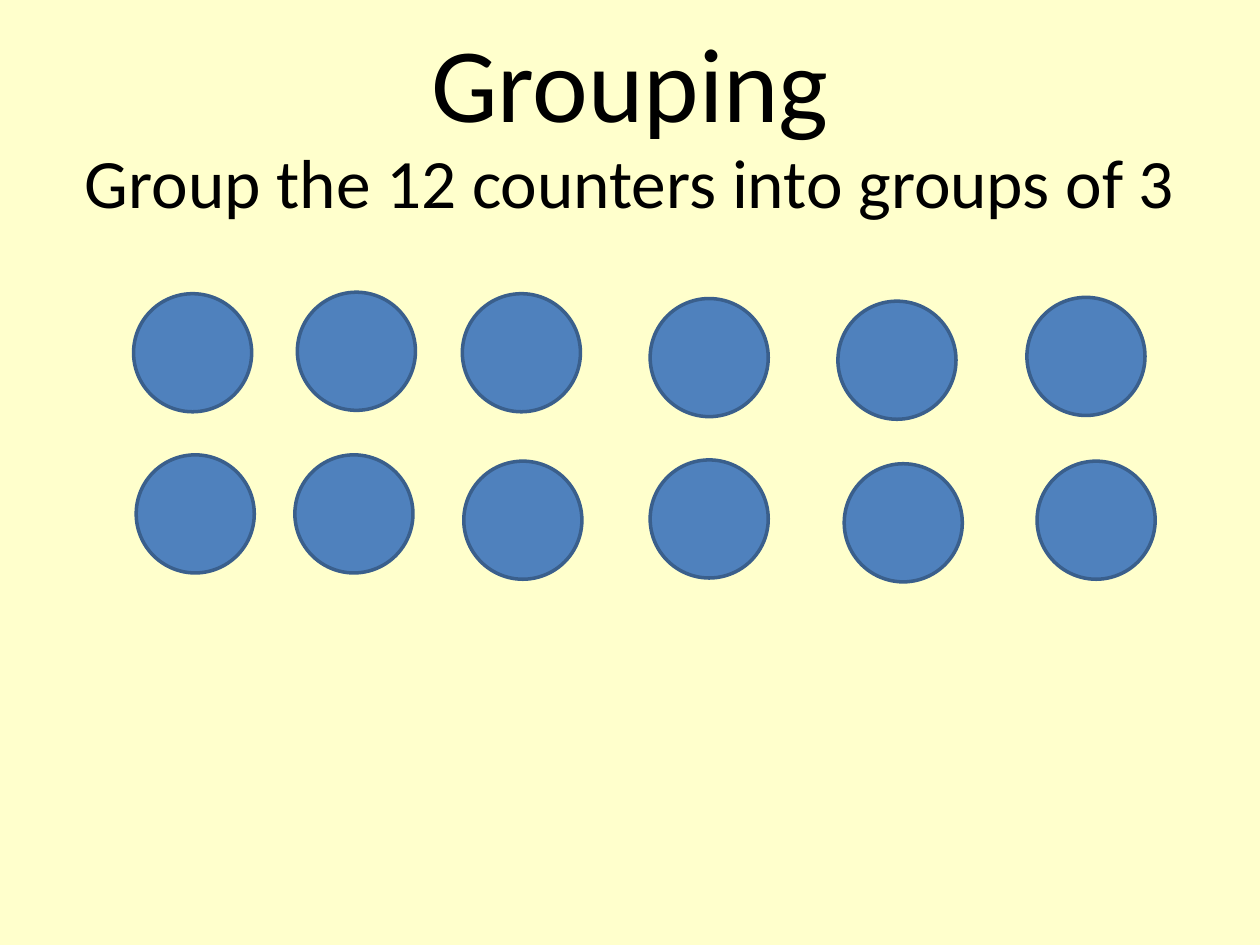
from dataclasses import dataclass

from pptx import Presentation
from pptx.dml.color import RGBColor
from pptx.enum.shapes import MSO_SHAPE
from pptx.enum.text import MSO_ANCHOR, MSO_AUTO_SIZE, PP_ALIGN
from pptx.util import Pt

OVAL = MSO_SHAPE.OVAL
MIDDLE = MSO_ANCHOR.MIDDLE
NO_AUTOFIT = MSO_AUTO_SIZE.NONE
CENTER = PP_ALIGN.CENTER
TITLE_ONLY = 5


@dataclass(frozen=True)
class Theme:
    font: str = "Calibri"
    background: RGBColor = RGBColor(0xFF, 0xFF, 0xCC)
    text: RGBColor = RGBColor(0, 0, 0)
    counter: RGBColor = RGBColor(0x4F, 0x81, 0xBD)
    outline: RGBColor = RGBColor(0x3A, 0x5F, 0x8C)
    heading_size: float = 60.3
    task_size: float = 39.6
    outline_width: float = 2


THEME = Theme()
COUNTER_SIZE = 67.5

# The counters are laid out loosely by hand: (left, top) of each, row by row.
COUNTER_ROWS = [
    [(76.3, 167.8), (169.9, 167), (264.2, 167.8),
     (371.5, 170.6), (478.8, 172.1), (586.8, 169.9)],
    [(77.8, 259.9), (168.5, 259.9), (265, 263.5),
     (371.5, 262.8), (482.4, 265), (592.6, 263.5)],
]


def set_title(page, heading, task):
    title = page.shapes.title
    title.left, title.top = Pt(36), Pt(21.6)
    title.width, title.height = Pt(648), Pt(90)
    frame = title.text_frame
    frame.auto_size = NO_AUTOFIT
    frame.vertical_anchor = MIDDLE
    frame.margin_top = Pt(14)
    para = frame.paragraphs[0]
    para.alignment = CENTER
    para.line_spacing = 0.94
    para.font.name = THEME.font
    para.font.color.rgb = THEME.text
    add_span(para, heading, THEME.heading_size)
    para.add_line_break()
    add_span(para, task, THEME.task_size)


def add_span(para, text, size):
    span = para.add_run()
    span.text = text
    span.font.size = Pt(size)


def add_counter(page, left, top):
    counter = page.shapes.add_shape(
        OVAL, Pt(left), Pt(top), Pt(COUNTER_SIZE), Pt(COUNTER_SIZE))
    counter.shadow.inherit = False
    counter.fill.solid()
    counter.fill.fore_color.rgb = THEME.counter
    counter.line.color.rgb = THEME.outline
    counter.line.width = Pt(THEME.outline_width)


def main():
    deck = Presentation()
    deck.slide_width, deck.slide_height = Pt(720), Pt(540)
    page = deck.slides.add_slide(deck.slide_layouts[TITLE_ONLY])
    page.background.fill.solid()
    page.background.fill.fore_color.rgb = THEME.background
    set_title(page, "Grouping", "Group the 12 counters into groups of 3")
    for row in COUNTER_ROWS:
        for left, top in row:
            add_counter(page, left, top)
    deck.save("out.pptx")


if __name__ == "__main__":
    main()
